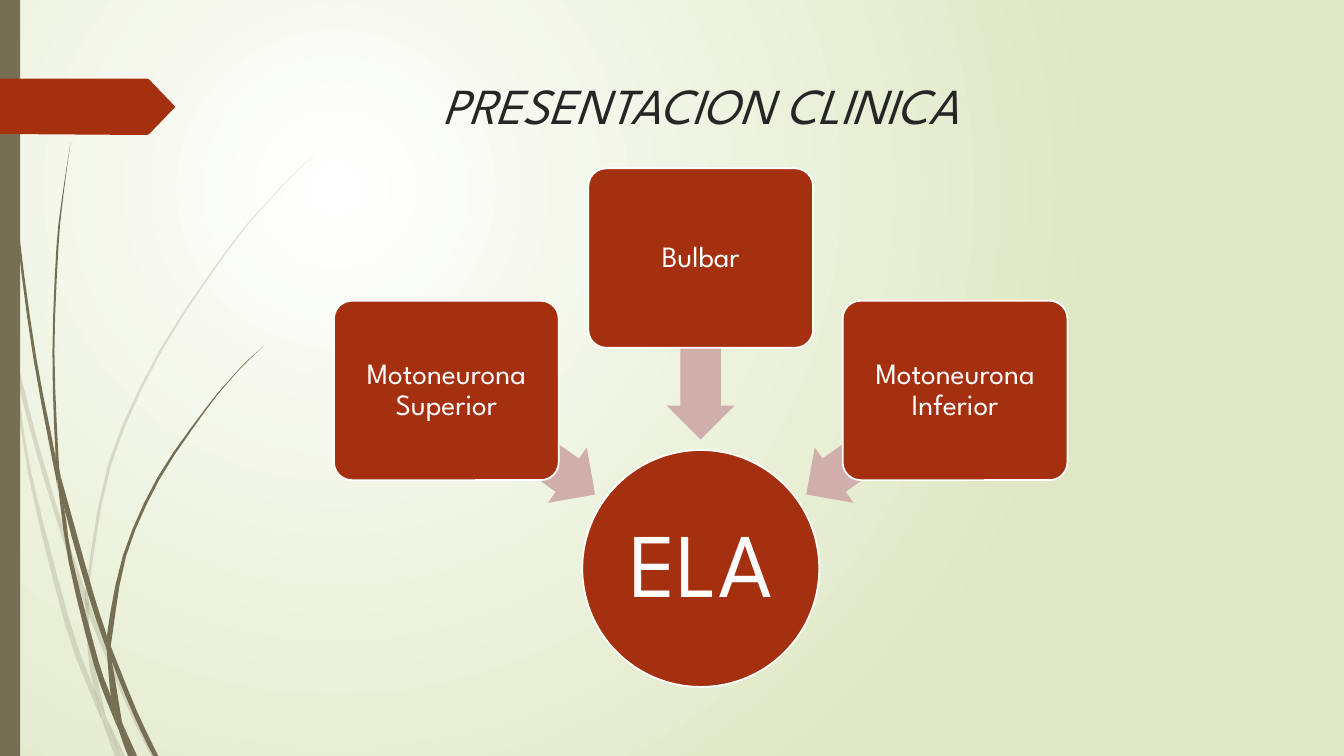
from math import cos, radians, sin

from lxml import etree
from pptx import Presentation, util as u
from pptx.dml.color import RGBColor
from pptx.enum import shapes, text
from pptx.oxml.ns import qn

# Content
TITLE = "PRESENTACION CLINICA"
CENTRE = "ELA"
BRANCHES = [("Motoneurona Superior", 215), ("Bulbar", 270), ("Motoneurona Inferior", 325)]

# Grass pieces: the knots down one edge, then back up the other (inches)
FAINT_GRASS = [
    ([(0, 2.82), (.09, 3.22), (.11, 3.5)], [(.1, 3.44), (0, 2.99)]),
    ([(.14, 3.45), (.36, 4.33), (.62, 5.2), (.85, 5.86)],
     [(.84, 5.99), (.58, 5.22), (.36, 4.49), (.17, 3.76)]),
    ([(.88, 5.96), (.92, 6.07), (1.27, 6.92), (1.55, 7.5)],
     [(1.5, 7.5), (1.23, 6.94), (.88, 6.1)]),
    ([(1.05, 7.11), (1.24, 7.5)], [(1.19, 7.5)]),
    ([(.11, 3.5), (.17, 3.76), (.31, 4.69), (.7, 6.19), (.93, 6.83), (1.01, 7.14)],
     [(.92, 6.93), (.65, 6.21), (.28, 4.7)]),
    ([(.84, 5.99), (.88, 6.1), (.91, 6.46), (1.05, 7.11)], [(.93, 6.83), (.87, 6.46)]),
    ([(3.12, 1.53), (2.9, 1.75), (2.68, 1.98), (2.29, 2.45), (1.6, 3.49), (1.1, 4.62),
      (.88, 5.84), (.88, 5.96)],
     [(.85, 5.86), (.85, 5.84), (1.07, 4.61), (1.58, 3.48), (2.28, 2.44), (2.68, 1.97),
      (2.89, 1.75)]),
    ([(1.01, 7.14), (1.19, 7.5)], [(1.14, 7.5)]),
    ([(.85, 5.86), (.88, 5.96), (.88, 6.1)], [(.84, 5.99)]),
    ([(.93, 6.83), (1.05, 7.11), (1.19, 7.5)], [(1.01, 7.14), (.99, 7.07)]),
]
SOLID_GRASS = [
    ([(.04, 0), (.05, .48), (.08, 1.09), (.19, 2.32), (.36, 3.55), (.55, 4.53), (.57, 4.81)],
     [(.56, 4.77), (.33, 3.55), (.17, 2.33), (.07, 1.1), (.04, .48), (.03, 0)]),
    ([(.6, 4.72), (.93, 5.9), (1.06, 6.31), (1.06, 6.45)], [(.88, 5.92), (.64, 5.05)]),
    ([(1.1, 6.41), (1.13, 6.49), (1.36, 7.06), (1.57, 7.5)],
     [(1.52, 7.5), (1.32, 7.08), (1.11, 6.56)]),
    ([(.57, 4.77), (.64, 5.05), (.72, 5.56), (.98, 6.57), (1.1, 6.91), (1.17, 7.22)],
     [(1.11, 7.08), (.93, 6.59), (.68, 5.57)]),
    ([(.7, 1.41), (.63, 1.93), (.58, 2.45), (.54, 3.49), (.58, 4.53), (.6, 4.72)],
     [(.55, 4.49), (.52, 3.49), (.56, 2.45), (.62, 1.93)]),
    ([(1.22, 7.19), (1.36, 7.5)], [(1.33, 7.5)]),
    ([(.55, 4.49), (.6, 4.72), (.64, 5.05)], [(.57, 4.77), (.55, 4.53)]),
    ([(2.61, 3.44), (2.45, 3.59), (2.31, 3.74), (2.05, 4.06), (1.58, 4.76), (1.25, 5.52),
      (1.11, 6.33), (1.1, 6.41)],
     [(1.06, 6.31), (1.22, 5.51), (1.56, 4.74), (2.04, 4.05), (2.31, 3.73), (2.45, 3.58)]),
    ([(1.17, 7.22), (1.31, 7.5)], [(1.27, 7.5)]),
    ([(1.06, 6.45), (1.11, 6.56), (1.21, 7.16), (1.22, 7.19)], [(1.16, 7.06), (1.1, 6.91)]),
    ([(1.06, 6.31), (1.1, 6.41), (1.11, 6.56)], [(1.06, 6.45)]),
    ([(1.1, 6.91), (1.22, 7.19), (1.33, 7.5)], [(1.3, 7.5), (1.17, 7.22), (1.16, 7.17)]),
]
PENNANT = [(0, .78), (1.46, .78), (1.48, .79), (1.74, 1.06), (1.48, 1.33), (1.46, 1.34), (0, 1.33)]

# Style
FONT = "League Spartan"
WHITE = RGBColor(0xFF, 0xFF, 0xFF)
GREEN = RGBColor(0xDF, 0xE8, 0xC4)
OLIVE = RGBColor(0x76, 0x6F, 0x54)
RED = RGBColor(0xA5, 0x30, 0x10)
PINK = RGBColor(0xCF, 0xAE, 0xAB)
INK = RGBColor(0x26, 0x26, 0x26)

# Diagram geometry (inches)
HUB_X, HUB_Y, HUB_SIZE = 6.95, 5.64, 2.35
BOX_ORBIT, BOX_W, BOX_H = 3.08, 2.23, 1.78
ARROW_ORBIT, ARROW_W, ARROW_H = 2.18, 1.8, .67


def inch(value):
    return u.Cm(value * 2.54)


def paint(shape, colour, outline=False):
    shape.shadow.inherit = False
    shape.fill.solid()
    shape.fill.fore_color.rgb = colour
    if outline:
        shape.line.color.rgb = WHITE
        shape.line.width = u.Pt(1.25)
    else:
        shape.line.fill.background()


def write(shape, words, size, colour, anchor, margin, italic=False):
    frame = shape.text_frame
    frame.text = words
    frame.word_wrap = True
    frame.vertical_anchor = anchor
    frame.margin_left = frame.margin_right = inch(margin)
    frame.margin_top = frame.margin_bottom = inch(.05)
    para = frame.paragraphs[0]
    para.alignment = text.PP_ALIGN.CENTER
    font = para.runs[0].font
    font.name, font.size, font.italic = FONT, u.Pt(size), italic
    font.color.rgb = colour
    return para


def add_centred(page, kind, x, y, width, height, colour, outline=False):
    shape = page.shapes.add_shape(kind, inch(x - width / 2), inch(y - height / 2),
                                  inch(width), inch(height))
    paint(shape, colour, outline)
    return shape


def add_outline(page, points, colour):
    corners = [(inch(x), inch(y)) for x, y in points]
    builder = page.shapes.build_freeform(*corners[0], scale=1.0)
    builder.add_line_segments(corners[1:], close=True)
    shape = builder.convert_to_shape()
    paint(shape, colour)
    return shape


def smooth(knots, steps=3):
    """Catmull-Rom curve through the knots."""
    padded = [knots[0], *knots, knots[-1]]
    curve = []
    for a, b, c, d in zip(padded, padded[1:], padded[2:], padded[3:]):
        for step in range(steps):
            t = step / steps
            curve.append([q + t / 2 * (r - p + t * (2 * p - 5 * q + 4 * r - s
                                                    + t * (3 * (q - r) + s - p)))
                          for p, q, r, s in zip(a, b, c, d)])
    return curve + [knots[-1]]


def add_grass(page, edges):
    down, up = edges
    back = smooth([down[-1], *up, down[0]])
    return add_outline(page, smooth(down) + back[1:-1], OLIVE)


def add_background(page):
    fill = page.background.fill
    fill.gradient()
    for stop, colour in zip(fill.gradient_stops, (WHITE, GREEN)):
        stop.color.rgb = colour
    gradient = page._element.find(".//" + qn("a:gradFill"))
    linear = gradient.find(qn("a:lin"))
    circle = etree.Element(qn("a:path"), {"path": "circle"})
    etree.SubElement(circle, qn("a:fillToRect"), l="50000", t="50000", r="100000", b="100000")
    gradient.replace(linear, circle)


def add_decoration(page):
    for edges in FAINT_GRASS:
        piece = add_grass(page, edges)
        tint = piece._element.spPr.find(qn("a:solidFill"))[0]
        etree.SubElement(tint, qn("a:alpha"), val="20000")
    for edges in SOLID_GRASS:
        add_grass(page, edges)
    add_centred(page, shapes.MSO_SHAPE.RECTANGLE, .1, 3.75, .2, 7.5, OLIVE)
    add_outline(page, PENNANT, RED)


def add_diagram(page):
    hub = add_centred(page, shapes.MSO_SHAPE.OVAL, HUB_X, HUB_Y, HUB_SIZE, HUB_SIZE, RED, True)
    write(hub, CENTRE, 65, WHITE, text.MSO_ANCHOR.MIDDLE, .05).line_spacing = .9
    for words, angle in BRANCHES:
        across, down = cos(radians(angle)), sin(radians(angle))
        arrow = add_centred(page, shapes.MSO_SHAPE.LEFT_ARROW, HUB_X + ARROW_ORBIT * across,
                            HUB_Y + ARROW_ORBIT * down, ARROW_W, ARROW_H, PINK)
        arrow.adjustments[0] = .6
        arrow.adjustments[1] = .5
        arrow.rotation = angle
        box = add_centred(page, shapes.MSO_SHAPE.ROUNDED_RECTANGLE, HUB_X + BOX_ORBIT * across,
                          HUB_Y + BOX_ORBIT * down, BOX_W, BOX_H, RED, True)
        box.adjustments[0] = .1
        write(box, words, 21, WHITE, text.MSO_ANCHOR.MIDDLE, .04).line_spacing = .9


def main():
    deck = Presentation()
    deck.slide_width, deck.slide_height = inch(13.33), inch(7.5)
    page = deck.slides.add_slide(deck.slide_layouts[6])
    add_background(page)
    add_decoration(page)
    title = page.shapes.add_textbox(inch(1.32), inch(.69), inch(11.26), inch(1.4))
    write(title, TITLE, 36, INK, text.MSO_ANCHOR.TOP, .1, italic=True)
    add_diagram(page)
    deck.save("out.pptx")


if __name__ == "__main__":
    main()
